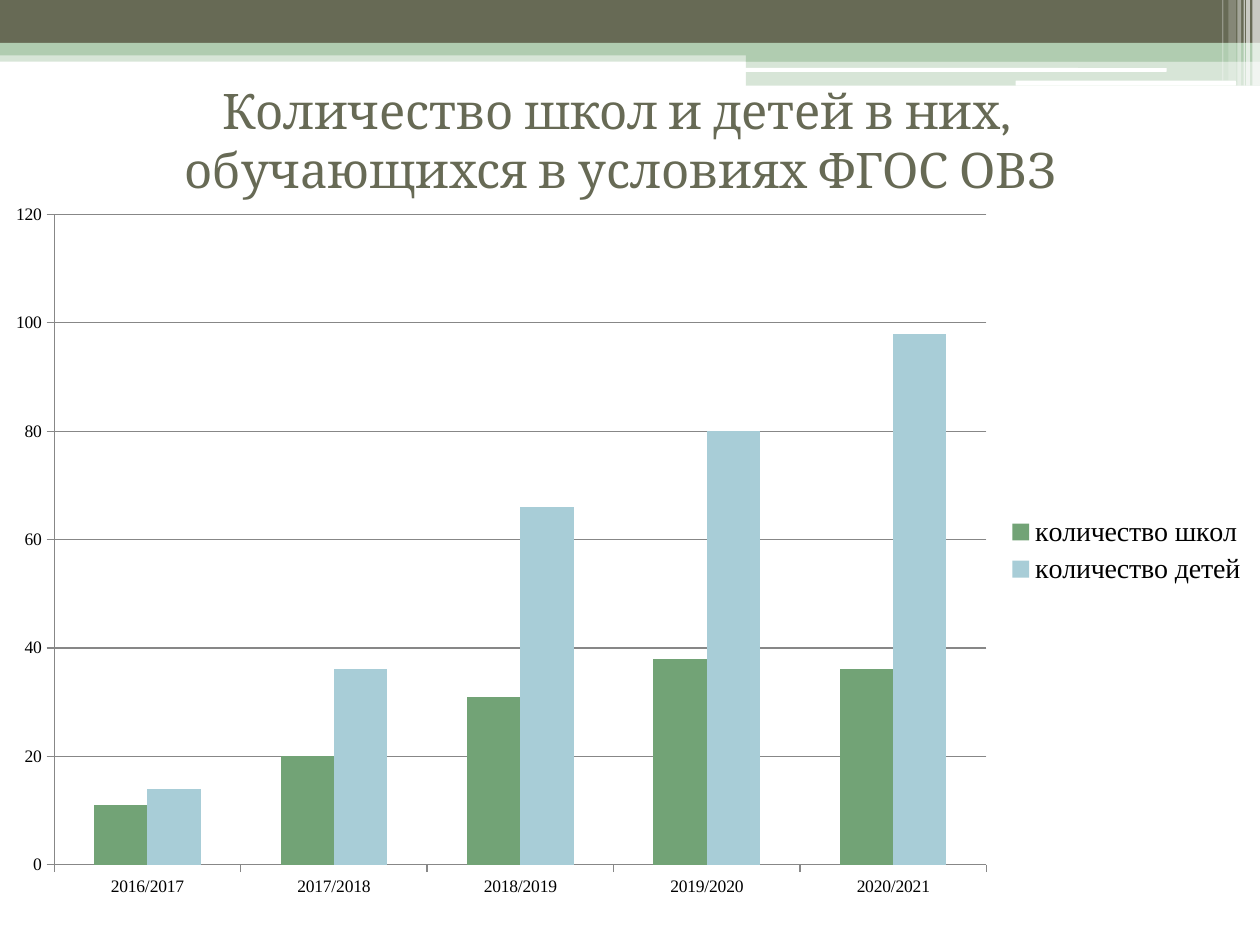
import pptx
import pptx.chart.data
import pptx.dml.color
import pptx.enum.chart
import pptx.enum.shapes
import pptx.enum.text
import pptx.oxml
import pptx.oxml.ns
import pptx.util
from lxml import etree

Inches, Pt = pptx.util.Inches, pptx.util.Pt
SHAPE = pptx.enum.shapes.MSO_SHAPE

COLORS = {
    "olive": "676A55", "mint": "B0CCB0", "white": "FFFFFF", "black": "000000",
    "green": "72A376", "blue": "A8CDD7", "axis": "878787",
}
HEADING_FONT, CHART_FONT = "Cambria", "Times New Roman"


def rgb(name):
    return pptx.dml.color.RGBColor.from_string(COLORS[name])


class SlideBuilder:
    def __init__(self, s):
        self.s = s

    def set_font(self, font, name, size, color):
        font.name, font.size = name, Pt(size)
        font.color.rgb = rgb(color)

    def bar(self, x, y, w, h, color, alpha=100, kind=SHAPE.RECTANGLE):
        sp = self.s.shapes.add_shape(kind, Inches(x), Inches(y), Inches(w), Inches(h))
        sp.shadow.inherit = False
        sp.fill.solid()
        sp.fill.fore_color.rgb = rgb(color)
        sp.line.fill.background()
        if alpha < 100:
            clr = sp.fill._xPr.find(".//" + pptx.oxml.ns.qn("a:srgbClr"))
            etree.SubElement(clr, pptx.oxml.ns.qn("a:alpha"), val=str(alpha * 1000))

    def title(self, lines, x, y, w, h):
        sp = self.s.shapes.title
        sp.left, sp.top, sp.width, sp.height = map(Inches, (x, y, w, h))
        # Bring the title in front of the decoration
        self.s.shapes._spTree.append(sp._element)
        tf = sp.text_frame
        tf.word_wrap = True
        tf.auto_size = pptx.enum.text.MSO_AUTO_SIZE.NONE
        tf.vertical_anchor = pptx.enum.text.MSO_ANCHOR.MIDDLE
        tf.margin_bottom = Inches(0.2)
        p = tf.paragraphs[0]
        p.alignment = pptx.enum.text.PP_ALIGN.CENTER
        for i, line in enumerate(lines):
            if i:
                p.add_line_break()
            r = p.add_run()
            r.text = line
            self.set_font(r.font, HEADING_FONT, 28, "olive")

    def column_chart(self, cats, series, x, y, w, h, plot_area):
        data = pptx.chart.data.CategoryChartData()
        data.categories = cats
        for name, values, _ in series:
            data.add_series(name, values)
        chart = self.s.shapes.add_chart(
            pptx.enum.chart.XL_CHART_TYPE.COLUMN_CLUSTERED,
            Inches(x), Inches(y), Inches(w), Inches(h), data).chart
        chart.has_title = False
        self.set_font(chart.font, HEADING_FONT, 10, "black")

        plot = chart.plots[0]
        plot.gap_width, plot.overlap = 150, 0
        plot.vary_by_categories = False
        for ser, (_, _, color) in zip(plot.series, series):
            ser.format.fill.solid()
            ser.format.fill.fore_color.rgb = rgb(color)

        for axis in (chart.category_axis, chart.value_axis):
            axis.major_tick_mark = pptx.enum.chart.XL_TICK_MARK.OUTSIDE
            axis.format.line.color.rgb = rgb("axis")
            axis.format.line.width = Pt(0.75)
            self.set_font(axis.tick_labels.font, CHART_FONT, 10, "black")
        axis = chart.value_axis
        axis.minimum_scale, axis.maximum_scale, axis.major_unit = 0, 120, 20
        axis.has_major_gridlines = True
        axis.major_gridlines.format.line.color.rgb = rgb("axis")
        axis.major_gridlines.format.line.width = Pt(0.75)

        chart.has_legend = True
        chart.legend.position = pptx.enum.chart.XL_LEGEND_POSITION.RIGHT
        chart.legend.include_in_layout = False
        self.set_font(chart.legend.font, CHART_FONT, 16, "black")
        self.place_plot(chart, plot_area)

    def place_plot(self, chart, fractions):
        area = chart._chartSpace.chart.plotArea
        for old in area.findall(pptx.oxml.ns.qn("c:layout")):
            area.remove(old)
        items = [("layoutTarget", "inner"), ("xMode", "edge"), ("yMode", "edge")]
        items += zip("xywh", fractions)
        body = "".join(f'<c:{tag} val="{val}"/>' for tag, val in items)
        area.insert(0, pptx.oxml.parse_xml(
            f'<c:layout {pptx.oxml.ns.nsdecls("c")}>'
            f'<c:manualLayout>{body}</c:manualLayout></c:layout>'))


def main():
    prs = pptx.Presentation()
    prs.slide_width, prs.slide_height = Inches(10), Inches(7.5)
    b = SlideBuilder(prs.slides.add_slide(prs.slide_layouts[5]))

    # Header bands
    b.bar(0, 0.4, 10, 0.09, "mint", 50)
    b.bar(0, 0, 10, 0.34, "olive")
    b.bar(0, 0.34, 10, 0.1, "mint")
    b.bar(5.92, 0.39, 4.08, 0.1, "mint")
    b.bar(5.92, 0.48, 4.08, 0.2, "mint", 50)
    for x, y, w, h in ((5.91, 0.54, 3.35, 0.03), (8.06, 0.64, 1.75, 0.04)):
        b.bar(x, y, w, h, "white", kind=SHAPE.ROUNDED_RECTANGLE)

    # Translucent stripes in the right corner: left, width, height, opacity
    for x, w, h, alpha in ((9.94, 0.06, 0.68, 65), (9.89, 0.03, 0.68, 65),
                           (9.87, 0.01, 0.68, 60), (9.82, 0.03, 0.68, 40),
                           (9.75, 0.06, 0.64, 20), (9.7, 0.01, 0.64, 30)):
        b.bar(x, 0, w, h, "white", alpha)

    # Title
    b.title(["Количество школ и детей в них, ", "обучающихся в условиях ФГОС ОВЗ"],
            0.43, 0.44, 9, 1.48)

    # Schools and pupils by school year
    years = [f"{year}/{year + 1}" for year in range(2016, 2021)]
    b.column_chart(years, [
        ("количество школ", (11, 20, 31, 38, 36), "green"),
        ("количество детей", (14, 36, 66, 80, 98), "blue"),
    ], 0, 1.55, 10, 5.64, plot_area=(0.043, 0.027, 0.74, 0.915))

    prs.save("out.pptx")


if __name__ == "__main__":
    main()
